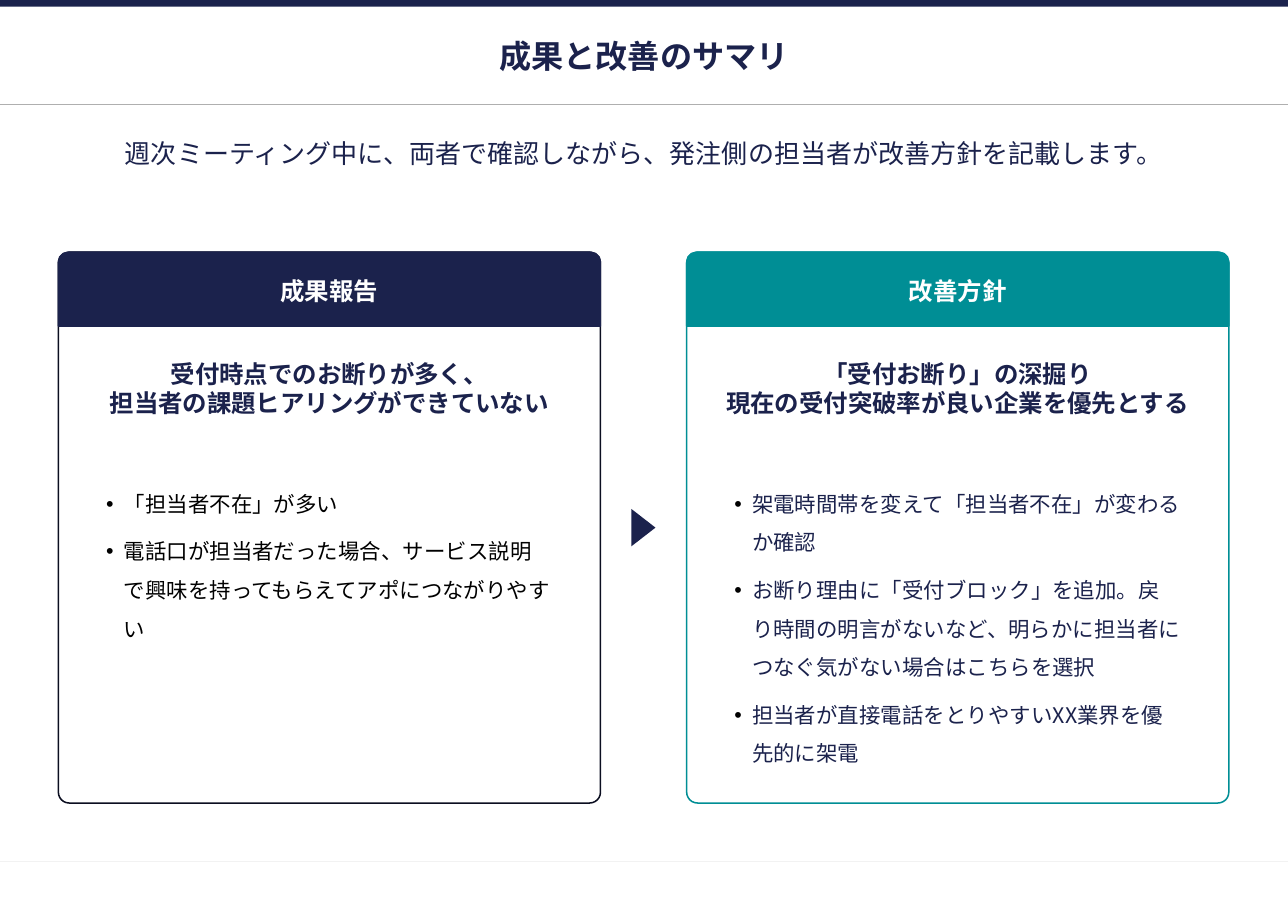
from dataclasses import dataclass
from typing import Any

from lxml.etree import SubElement
from pptx import Presentation
from pptx.dml.color import RGBColor
from pptx.enum.shapes import MSO_CONNECTOR, MSO_SHAPE
from pptx.enum.text import MSO_ANCHOR, MSO_AUTO_SIZE, PP_ALIGN
from pptx.oxml.ns import qn
from pptx.util import Pt


@dataclass(frozen=True)
class Theme:
    navy: str = "1B224C"
    teal: str = "008E95"
    ink: str = "0B0E20"
    black: str = "000000"
    white: str = "FFFFFF"
    grey: str = "AFAFAF"
    pale: str = "F2F2F2"
    title: float = 21
    lead: float = 17
    head: float = 16
    body: float = 14
    font: str = "Noto Sans CJK JP"
    plain: str = "Arial"


@dataclass(frozen=True)
class Box:
    x: float
    y: float
    w: float
    h: float

    def points(self) -> list[Pt]:
        return [Pt(v) for v in (self.x, self.y, self.w, self.h)]


@dataclass(frozen=True)
class Style:
    size: float
    color: str
    bold: bool = False
    latin: str = Theme.font
    align: PP_ALIGN = PP_ALIGN.CENTER
    anchor: MSO_ANCHOR = MSO_ANCHOR.TOP
    inset: tuple[float, float, float, float] = (2.8, 2.8, 2.8, 2.8)


@dataclass(frozen=True)
class Card:
    head: str
    claim: list[str]
    items: list[str]
    fill: str
    edge: str
    ink: str


T = Theme()
WIDTH, HEIGHT = 841.68, 595.44
MARGIN, TOP = 38.16, 164.88
CARD_W, CARD_H, HEAD_H = 354.24, 360, 48.24
STEP = 410.6
INDENT = 11.5

LEAD = "週次ミーティング中に、両者で確認しながら、発注側の担当者が改善方針を記載します。"
CARDS = [
    Card("成果報告",
         ["受付時点でのお断りが多く、", "担当者の課題ヒアリングができていない"],
         ["「担当者不在」が多い",
          "電話口が担当者だった場合、サービス説明で興味を持ってもらえてアポにつながりやすい"],
         T.navy, T.ink, T.black),
    Card("改善方針",
         ["「受付お断り」の深掘り", "現在の受付突破率が良い企業を優先とする"],
         ["架電時間帯を変えて「担当者不在」が変わるか確認",
          "お断り理由に「受付ブロック」を追加。戻り時間の明言がないなど、"
          "明らかに担当者につなぐ気がない場合はこちらを選択",
          "担当者が直接電話をとりやすいXX業界を優先的に架電"],
         T.teal, T.teal, T.navy),
]


def rgb(code: str) -> RGBColor:
    return RGBColor.from_string(code)


def apply(target: Any, values: dict[str, Any]) -> None:
    for name, value in values.items():
        setattr(target, name, value)


def write(shape: Any, lines: list[str], style: Style) -> None:
    frame = shape.text_frame
    left, top, right, base = (Pt(v) for v in style.inset)
    apply(frame, {
        "word_wrap": True, "auto_size": MSO_AUTO_SIZE.NONE,
        "vertical_anchor": style.anchor, "margin_left": left,
        "margin_top": top, "margin_right": right, "margin_bottom": base,
    })
    for i, line in enumerate(lines):
        para = frame.add_paragraph() if i else frame.paragraphs[0]
        para.alignment = style.align
        run = para.add_run()
        run.text = line
        apply(run.font, {"size": Pt(style.size), "bold": style.bold,
                         "name": style.latin})
        run.font.color.rgb = rgb(style.color)
        SubElement(run.font._element, qn("a:ea")).set("typeface", T.font)


def add_bullets(shape: Any) -> None:
    for para in shape.text_frame.paragraphs:
        apply(para, {"line_spacing": 1.5, "space_before": Pt(6)})
        props = para._p.get_or_add_pPr()
        props.set("marL", str(Pt(INDENT)))
        props.set("indent", str(-Pt(INDENT)))
        color = SubElement(props, qn("a:buClr"))
        SubElement(color, qn("a:srgbClr")).set("val", T.black)
        SubElement(props, qn("a:buFont")).set("typeface", T.plain)
        SubElement(props, qn("a:buChar")).set("char", "•")


def add_block(slide: Any, kind: MSO_SHAPE, box: Box, fill: str,
              edge: str | None = None, bends: tuple[float, ...] = ()) -> Any:
    shape = slide.shapes.add_shape(kind, *box.points())
    shape.shadow.inherit = False
    shape.fill.solid()
    shape.fill.fore_color.rgb = rgb(fill)
    if edge:
        shape.line.color.rgb = rgb(edge)
        shape.line.width = Pt(1)
    else:
        shape.line.fill.background()
    for i, bend in enumerate(bends):
        shape.adjustments[i] = bend
    return shape


def add_rule(slide: Any, y: float, color: str) -> None:
    rule = slide.shapes.add_connector(
        MSO_CONNECTOR.STRAIGHT, Pt(0), Pt(y), Pt(WIDTH), Pt(y))
    rule.line.color.rgb = rgb(color)
    rule.line.width = Pt(0.75)
    SubElement(rule._element.spPr, qn("a:effectLst"))


def add_text(slide: Any, box: Box, lines: list[str], style: Style) -> Any:
    shape = slide.shapes.add_textbox(*box.points())
    write(shape, lines, style)
    return shape


def add_card(slide: Any, card: Card, x: float) -> None:
    frame = add_block(slide, MSO_SHAPE.ROUNDED_RECTANGLE,
                      Box(x, TOP, CARD_W, CARD_H), T.white, card.edge, (0.02,))
    write(frame, card.claim, Style(T.head, T.navy, True,
                                   inset=(5.7, 67.7, 5.7, 5.7)))
    head = add_block(slide, MSO_SHAPE.ROUND_2_SAME_RECTANGLE,
                     Box(x, TOP, CARD_W, HEAD_H), card.fill, card.fill, (0.13, 0))
    write(head, [card.head], Style(T.head, T.white, True, anchor=MSO_ANCHOR.MIDDLE,
                                   inset=(7.2, 3.6, 7.2, 3.6)))
    notes = add_text(slide, Box(x + 28.4, 309.6, 297.4, 184.3), card.items,
                     Style(T.body, card.ink, align=PP_ALIGN.LEFT))
    add_bullets(notes)


def main() -> None:
    deck = Presentation()
    apply(deck, {"slide_width": Pt(WIDTH), "slide_height": Pt(HEIGHT)})
    slide = deck.slides.add_slide(deck.slide_layouts[5])

    add_rule(slide, 563, T.pale)
    add_block(slide, MSO_SHAPE.RECTANGLE, Box(0, 0, WIDTH, 4.3), T.navy)
    add_rule(slide, 68.4, T.grey)

    title = slide.shapes.title
    apply(title, dict(zip(("left", "top", "width", "height"),
                          Box(MARGIN, 23, 765.36, 28).points())))
    write(title, ["成果と改善のサマリ"],
          Style(T.title, T.navy, True, anchor=MSO_ANCHOR.MIDDLE,
                inset=(2.8, 2.8, 2.8, 4.3)))
    add_text(slide, Box(MARGIN, 87.1, 765.36, 59), [LEAD],
             Style(T.lead, T.navy, latin=T.plain))

    for i, card in enumerate(CARDS):
        add_card(slide, card, MARGIN + i * STEP)
    arrow = add_block(slide, MSO_SHAPE.ISOSCELES_TRIANGLE,
                      Box(408.2, 337, 24.5, 15.8), T.navy)
    arrow.rotation = 90
    deck.save("out.pptx")


if __name__ == "__main__":
    main()
